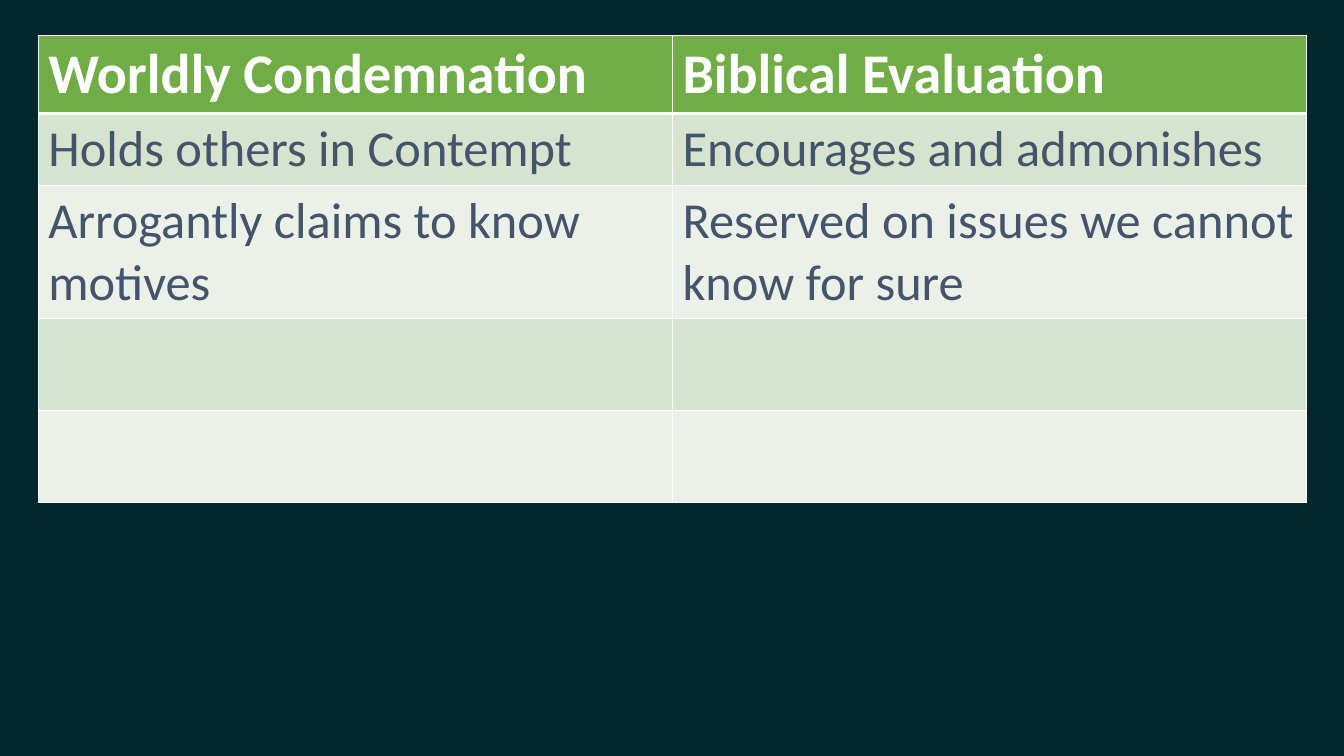
from lxml import etree
from pptx import Presentation
from pptx import util as u
from pptx.dml.color import RGBColor
from pptx.oxml import ns

COLORS = {
    "background": "03272D",
    "header": "70AD47",
    "odd": "D5E3CF",
    "even": "EBF1E9",
    "border": "FFFFFF",
    "heading": "FFFFFF",
    "body": "44546A",
}
FORMATS = {
    "heading": {"name": "Calibri", "size": u.Pt(40), "bold": True},
    "body": {"name": "Calibri", "size": u.Pt(36), "bold": False},
}
COMPARISON = [
    ("Worldly Condemnation", "Biblical Evaluation"),
    ("Holds others in Contempt", "Encourages and admonishes"),
    ("Arrogantly claims to know motives", "Reserved on issues we cannot know for sure"),
    ("", ""),
    ("", ""),
]
ROW_HEIGHTS = [0.67, 0.67, 0.91, 0.91, 0.91]
COLUMN_WIDTH = 6.29


class ComparisonSlide:
    def __init__(self, deck):
        self.slide = deck.slides.add_slide(deck.slide_layouts[6])
        background = self.slide.background.fill
        background.solid()
        background.fore_color.rgb = self.color("background")

    def color(self, role):
        return RGBColor.from_string(COLORS[role])

    def border(self, cell, side, width):
        line = etree.SubElement(
            cell._tc.get_or_add_tcPr(), ns.qn(f"a:ln{side}"), w=str(u.Pt(width))
        )
        fill = etree.SubElement(line, ns.qn("a:solidFill"))
        etree.SubElement(fill, ns.qn("a:srgbClr"), val=COLORS["border"])

    def cell(self, cell, content, row):
        header_edge = {0: "B", 1: "T"}.get(row)
        for side in "LRTB":
            self.border(cell, side, 3 if side == header_edge else 1)
        band = "header" if row == 0 else "odd" if row % 2 else "even"
        cell.fill.solid()
        cell.fill.fore_color.rgb = self.color(band)
        if content:
            role = "heading" if row == 0 else "body"
            run = cell.text_frame.paragraphs[0].add_run()
            run.text = content
            for attribute, value in FORMATS[role].items():
                setattr(run.font, attribute, value)
            run.font.color.rgb = self.color(role)

    def table(self, left, top, rows, heights, column_width):
        columns = len(rows[0])
        comparison = self.slide.shapes.add_table(
            len(rows), columns, u.Inches(left), u.Inches(top),
            u.Inches(columns * column_width), u.Inches(sum(heights)),
        ).table
        for column in comparison.columns:
            column.width = u.Inches(column_width)
        for index, (contents, height) in enumerate(zip(rows, heights)):
            comparison.rows[index].height = u.Inches(height)
            for column, content in enumerate(contents):
                self.cell(comparison.cell(index, column), content, index)


def main():
    deck = Presentation()
    deck.slide_width = u.Inches(13.33)
    deck.slide_height = u.Inches(7.5)
    slide = ComparisonSlide(deck)
    slide.table(0.38, 0.35, COMPARISON, ROW_HEIGHTS, COLUMN_WIDTH)
    deck.save("out.pptx")


if __name__ == "__main__":
    main()
